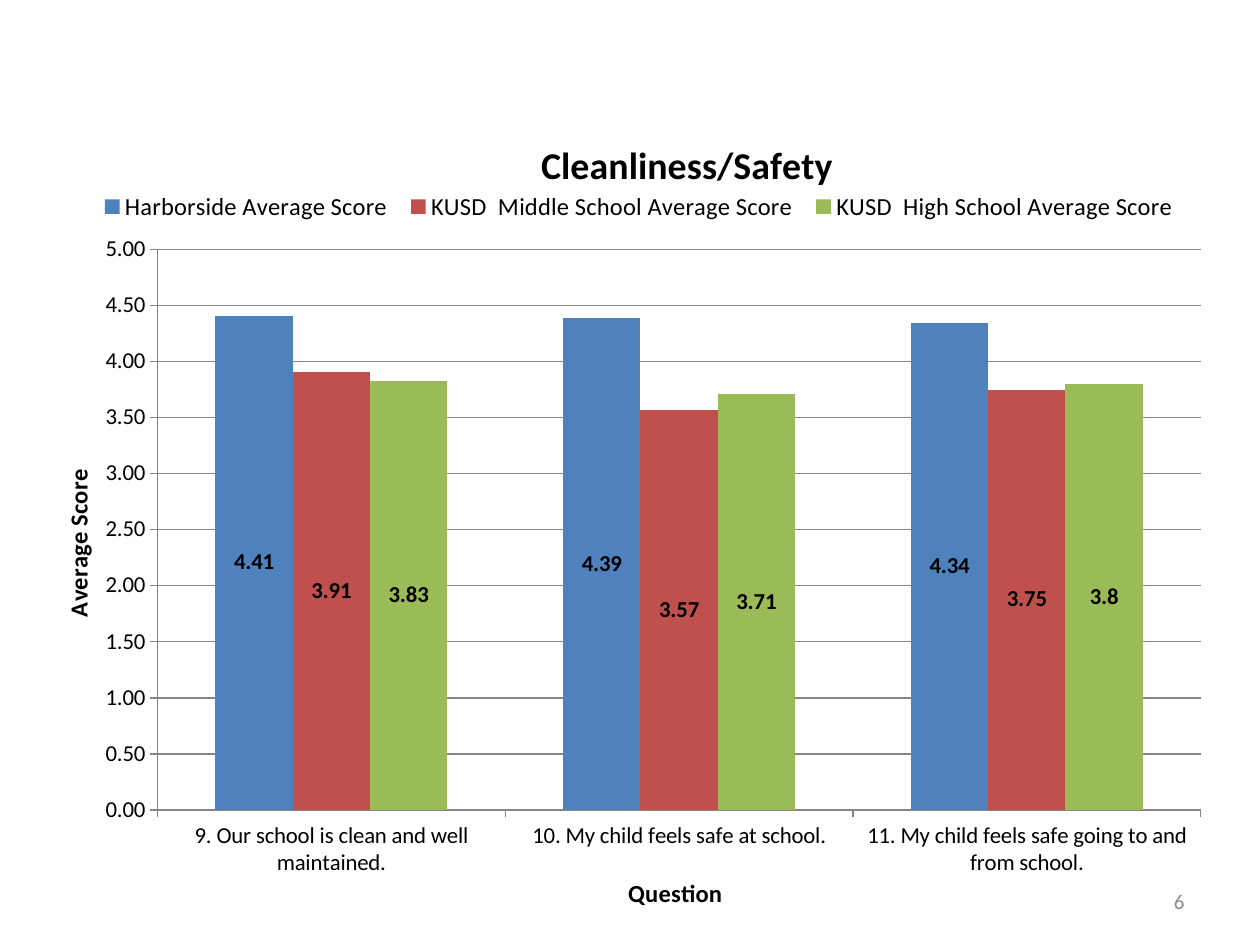
from dataclasses import dataclass

from lxml import etree
from pptx import Presentation
from pptx.chart.data import CategoryChartData
from pptx.dml.color import RGBColor
from pptx.enum import chart as c, text as t
from pptx.oxml.ns import qn
from pptx.util import Inches, Pt


@dataclass(frozen=True)
class Theme:
    font: str = "Calibri"
    ink: str = "000000"
    muted: str = "8C8C8C"
    rule: str = "868686"
    title: float = 21.6
    heading: float = 14
    body: float = 13
    page_number: float = 12


THEME = Theme()
TITLE = "Cleanliness/Safety"
QUESTIONS = [
    "9. Our school is clean and well maintained.",
    "10. My child feels safe at school.",
    "11. My child feels safe going to and from school.",
]
# name, scores, bar colour, label number format
SERIES = [
    ("Harborside Average Score", (4.41, 4.39, 4.34), "4F81BD", "0.00"),
    ("KUSD  Middle School Average Score", (3.91, 3.57, 3.75), "C0504D", "General"),
    ("KUSD  High School Average Score", (3.83, 3.71, 3.8), "9BBB59", "General"),
]
PAGE_NUMBER = "6"
CHART_LEFT, CHART_TOP = 0.33, 0.92
CHART_WIDTH, CHART_HEIGHT = 9.34, 6.36


def style(font, size, bold=False, color=THEME.ink):
    font.name, font.size, font.bold = THEME.font, Pt(size), bold
    font.color.rgb = RGBColor.from_string(color)


def place(element, index, x, y, size=None, inner=False):
    """Give a chart part a manual layout, in inches from the chart's corner."""
    for old in element.findall(qn("c:layout")):
        element.remove(old)
    layout = etree.Element(qn("c:layout"))
    manual = etree.SubElement(layout, qn("c:manualLayout"))
    entries = [("layoutTarget", "inner")] if inner else []
    entries += [("xMode", "edge"), ("yMode", "edge"),
                ("x", x / CHART_WIDTH), ("y", y / CHART_HEIGHT)]
    if size:
        entries += [("w", size[0] / CHART_WIDTH), ("h", size[1] / CHART_HEIGHT)]
    for tag, value in entries:
        etree.SubElement(manual, qn(f"c:{tag}")).set("val", str(value))
    element.insert(index, layout)


def write_title(title, words, size, x, y):
    title.text_frame.text = words
    style(title.text_frame.paragraphs[0].runs[0].font, size, bold=True)
    place(title._element, 1, x, y)


def style_axis(axis, words, x, y):
    axis.has_title = True
    write_title(axis.axis_title, words, THEME.heading, x, y)
    style(axis.tick_labels.font, THEME.body)
    axis.major_tick_mark = c.XL_TICK_MARK.OUTSIDE
    axis.minor_tick_mark = c.XL_TICK_MARK.NONE
    axis.format.line.color.rgb = RGBColor.from_string(THEME.rule)


def add_score_chart(page):
    data = CategoryChartData()
    data.categories = QUESTIONS
    for name, scores, _, _ in SERIES:
        data.add_series(name, scores)
    chart = page.shapes.add_chart(
        c.XL_CHART_TYPE.COLUMN_CLUSTERED, Inches(CHART_LEFT), Inches(CHART_TOP),
        Inches(CHART_WIDTH), Inches(CHART_HEIGHT), data).chart
    style(chart.font, 10)

    chart.has_title = True
    write_title(chart.chart_title, TITLE, THEME.title, x=3.91, y=0.12)
    chart.chart_title.include_in_layout = False

    chart.has_legend = True
    chart.legend.position = c.XL_LEGEND_POSITION.TOP
    chart.legend.include_in_layout = False
    style(chart.legend.font, THEME.heading)
    place(chart.legend._element, 1, x=0.38, y=0.52, size=(8.72, 0.4))

    style_axis(chart.category_axis, "Question", x=4.62, y=6)
    scale = chart.value_axis
    style_axis(scale, "Average Score", x=0.12, y=2.77)
    scale.minimum_scale, scale.maximum_scale, scale.major_unit = 0, 5, 0.5
    scale.tick_labels.number_format = "0.00"
    scale.tick_labels.number_format_is_linked = False
    scale.has_major_gridlines = True
    scale.major_gridlines.format.line.color.rgb = RGBColor.from_string(THEME.rule)

    plot = chart.plots[0]
    plot.gap_width, plot.overlap, plot.vary_by_categories = 150, 0, False
    place(plot._element.getparent(), 0, x=0.92, y=1.06, size=(8.28, 4.45), inner=True)
    for series, (_, _, color, number_format) in zip(plot.series, SERIES):
        series.format.fill.solid()
        series.format.fill.fore_color.rgb = RGBColor.from_string(color)
        labels = series.data_labels
        labels.show_value = True
        labels.position = c.XL_LABEL_POSITION.CENTER
        labels.number_format = number_format
        labels.number_format_is_linked = False
        style(labels.font, THEME.body, bold=True)


def add_page_number(page):
    box = page.shapes.add_textbox(Inches(7.17), Inches(6.95), Inches(2.33), Inches(0.4))
    frame = box.text_frame
    frame.word_wrap = True
    frame.vertical_anchor = t.MSO_ANCHOR.MIDDLE
    frame.text = PAGE_NUMBER
    para = frame.paragraphs[0]
    para.alignment = t.PP_ALIGN.RIGHT
    style(para.runs[0].font, THEME.page_number, color=THEME.muted)


def main():
    deck = Presentation()
    deck.slide_width, deck.slide_height = Inches(10), Inches(7.5)
    page = deck.slides.add_slide(deck.slide_layouts[6])
    add_score_chart(page)
    add_page_number(page)
    deck.save("out.pptx")


if __name__ == "__main__":
    main()
